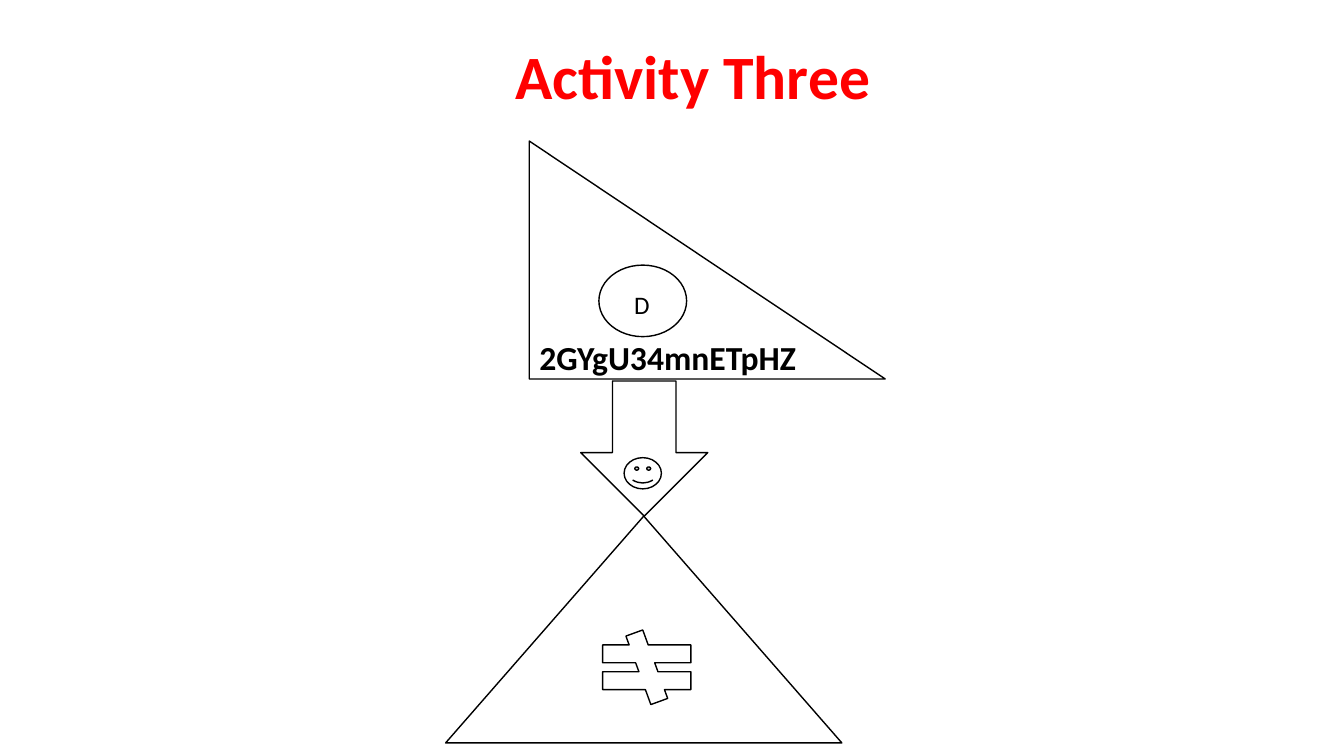
import pptx
import pptx.util
import pptx.dml.color
import pptx.enum.shapes
import pptx.enum.text

Inches = pptx.util.Inches
SHAPE = pptx.enum.shapes.MSO_SHAPE
ALIGN = pptx.enum.text.PP_ALIGN
ANCHOR = pptx.enum.text.MSO_ANCHOR


def rgb(value):
    """Return the colour for a hex string."""
    return pptx.dml.color.RGBColor.from_string(value)


def write_text(sp, text, size=18, color="000000", bold=False, align=ALIGN.LEFT):
    """Put one formatted line of text into a shape."""
    tf = sp.text_frame
    tf.word_wrap = True
    tf.auto_size = pptx.enum.text.MSO_AUTO_SIZE.NONE
    tf.vertical_anchor = ANCHOR.TOP
    p = tf.paragraphs[0]
    p.alignment = align
    r = p.add_run()
    r.text = text
    r.font.name = "Calibri"
    r.font.size = pptx.util.Pt(size)
    r.font.bold = bold
    r.font.color.rgb = rgb(color)


def add_title(s, text, left, top, width, height, **style):
    """Move the title placeholder and fill it."""
    sp = s.shapes.title
    sp.left, sp.top = Inches(left), Inches(top)
    sp.width, sp.height = Inches(width), Inches(height)
    write_text(sp, text, **style)


def add_label(s, text, left, top, width, height, **style):
    """Add a text box with one line of text."""
    box = [Inches(v) for v in (left, top, width, height)]
    write_text(s.shapes.add_textbox(*box), text, **style)


def add_outline(s, kind, left, top, width, height, adjustments=()):
    """Add a white preset shape with a thin black outline."""
    box = [Inches(v) for v in (left, top, width, height)]
    sp = s.shapes.add_shape(kind, *box)
    sp.shadow.inherit = False
    sp.fill.solid()
    sp.fill.fore_color.rgb = rgb("FFFFFF")
    sp.line.color.rgb = rgb("000000")
    sp.line.width = pptx.util.Pt(1)
    for i, value in enumerate(adjustments):
        sp.adjustments[i] = value


def main():
    """Build the slide and save it."""
    prs = pptx.Presentation()
    prs.slide_width, prs.slide_height = Inches(13.33), Inches(7.5)
    s = prs.slides.add_slide(prs.slide_layouts[5])

    add_title(s, "Activity Three", 4, 0.33, 5.75, 0.84,
              size=44, color="FF0000", bold=True, align=ALIGN.CENTER)
    add_outline(s, SHAPE.RIGHT_TRIANGLE, 5.25, 1.4, 3.53, 2.36)
    add_outline(s, SHAPE.OVAL, 5.94, 2.63, 0.87, 0.71)
    add_outline(s, SHAPE.DOWN_ARROW, 5.76, 3.78, 1.26, 1.34)
    add_label(s, "D", 6.19, 2.82, 0.37, 0.4)
    add_outline(s, SHAPE.ISOSCELES_TRIANGLE, 4.42, 5.12, 3.93, 2.25, [0.5])
    add_outline(s, SHAPE.MATH_NOT_EQUAL, 5.82, 6.25, 1.19, 0.74, [0.24, 42, 0.12])
    add_label(s, "2GYgU34mnETpHZ", 5.25, 3.29, 3.11, 0.5, size=24, bold=True)
    add_outline(s, SHAPE.SMILEY_FACE, 6.19, 4.54, 0.37, 0.31)

    prs.save("out.pptx")


if __name__ == "__main__":
    main()
